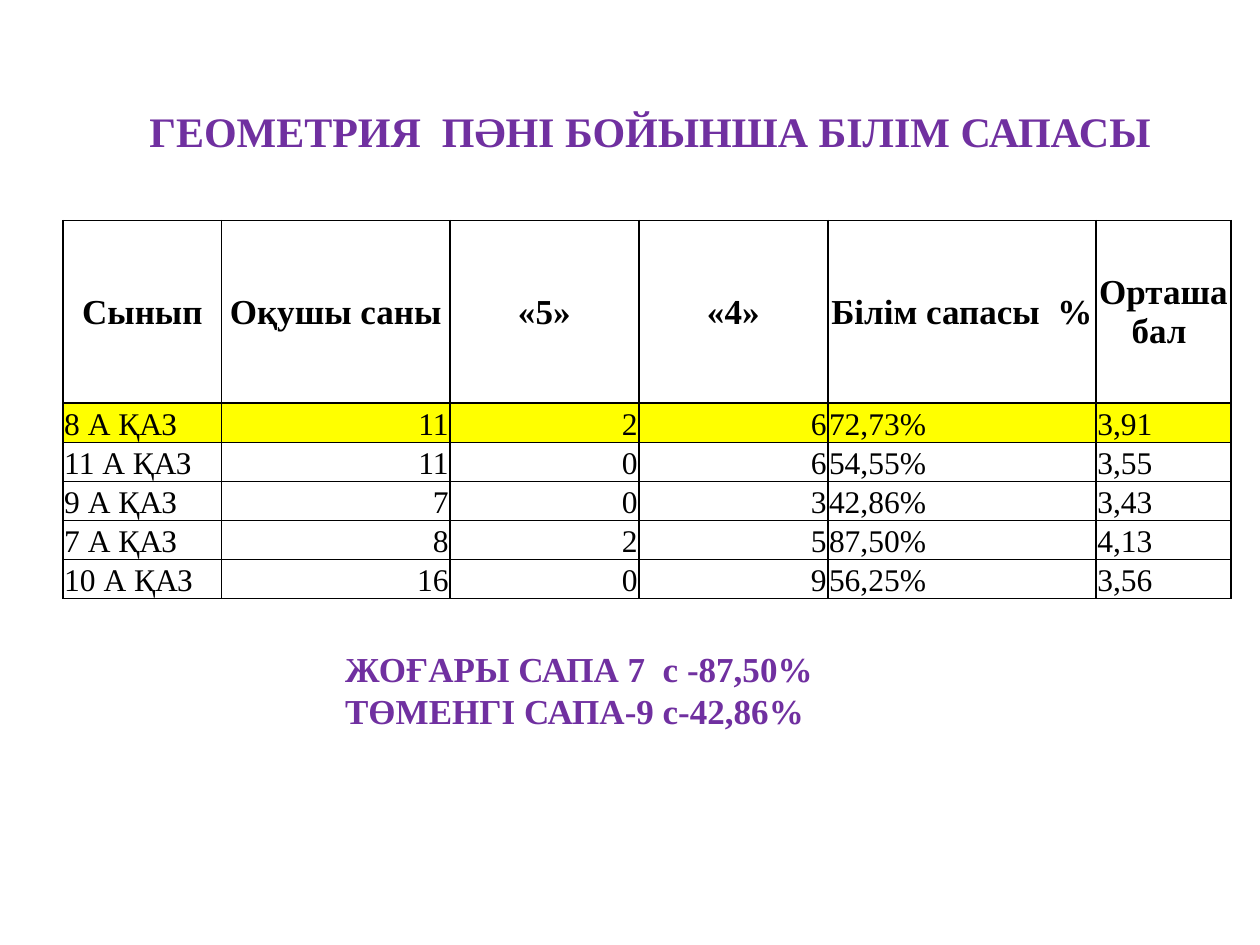
import pptx
import pptx.util
import pptx.dml.color
import pptx.enum.text
import pptx.oxml.ns
from lxml import etree

Inches = pptx.util.Inches
Pt = pptx.util.Pt
ALIGN = pptx.enum.text.PP_ALIGN
ANCHOR = pptx.enum.text.MSO_ANCHOR
FONT = "Times New Roman"
COLORS = {"title": "7030A0", "text": "000000", "plain": "FFFFFF", "mark": "FFFF00"}

WIDTHS = [1.26, 1.81, 1.5, 1.5, 2.13, 1.07]
HEAD = ["Сынып", "Оқушы саны", "«5»", "«4»", "Білім сапасы  %", "Орташа бал "]
GRADES = [
    ["8 А ҚАЗ", "11", "2", "6", "72,73%", "3,91"],
    ["11 А ҚАЗ", "11", "0", "6", "54,55%", "3,55"],
    ["9 А ҚАЗ", "7", "0", "3", "42,86%", "3,43"],
    ["7 А ҚАЗ", "8", "2", "5", "87,50%", "4,13"],
    ["10 А ҚАЗ", "16", "0", "9", "56,25%", "3,56"],
]


def rgb(name):
    return pptx.dml.color.RGBColor.from_string(COLORS[name])


def style(frame, size, color, bold, align):
    for para in frame.paragraphs:
        para.alignment = align
        for run in para.runs:
            font = run.font
            font.name, font.size, font.bold = FONT, Pt(size), bold
            font.color.rgb = rgb(color)


def add_text(slide, box, text, size, align):
    frame = slide.shapes.add_textbox(*map(Inches, box)).text_frame
    frame.word_wrap = True
    frame.auto_size = pptx.enum.text.MSO_AUTO_SIZE.SHAPE_TO_FIT_TEXT
    frame.text = text
    style(frame, size, "title", True, align)


def add_edges(cell):
    """Draw a thin line on all four sides of a cell."""
    qn = pptx.oxml.ns.qn
    props = cell._tc.get_or_add_tcPr()
    for side in ("lnL", "lnR", "lnT", "lnB"):
        line = etree.SubElement(props, qn("a:" + side), w=str(Pt(1)))
        fill = etree.SubElement(line, qn("a:solidFill"))
        etree.SubElement(fill, qn("a:srgbClr"), val=COLORS["text"])


def fill_cell(cell, text, head, align, fill):
    cell.text_frame.text = text
    cell.margin_left = cell.margin_right = cell.margin_top = Inches(0.01)
    cell.margin_bottom = 0
    cell.vertical_anchor = ANCHOR.MIDDLE if head else ANCHOR.BOTTOM
    style(cell.text_frame, 20 if head else 18, "text", head, align)
    add_edges(cell)
    cell.fill.solid()
    cell.fill.fore_color.rgb = rgb(fill)


def add_grades(slide):
    rows = [HEAD] + GRADES
    box = map(Inches, (0.5, 1.75, sum(WIDTHS), 2.45))
    table = slide.shapes.add_table(len(rows), len(HEAD), *box).table
    for col, width in zip(table.columns, WIDTHS):
        col.width = Inches(width)
    for r, row in enumerate(rows):
        head = r == 0
        table.rows[r].height = Inches(1.45 if head else 0.2)
        for c, text in enumerate(row):
            if head:
                align = ALIGN.CENTER
            else:
                align = ALIGN.RIGHT if c in (1, 2, 3) else ALIGN.LEFT
            fill = "mark" if r == 1 else "plain"
            fill_cell(table.cell(r, c), text, head, align, fill)


def main():
    deck = pptx.Presentation()
    deck.slide_width, deck.slide_height = Inches(10), Inches(7.5)
    slide = deck.slides.add_slide(deck.slide_layouts[6])
    add_text(slide, (0.91, 0.79, 8.5, 0.5),
             "ГЕОМЕТРИЯ  ПӘНІ БОЙЫНША БІЛІМ САПАСЫ", 24, ALIGN.CENTER)
    add_grades(slide)
    add_text(slide, (2.64, 5.09, 4.49, 1.11),
             "ЖОҒАРЫ САПА 7  с -87,50%\nТӨМЕНГІ САПА-9 с-42,86%", 20, ALIGN.LEFT)
    deck.save("out.pptx")


if __name__ == "__main__":
    main()
